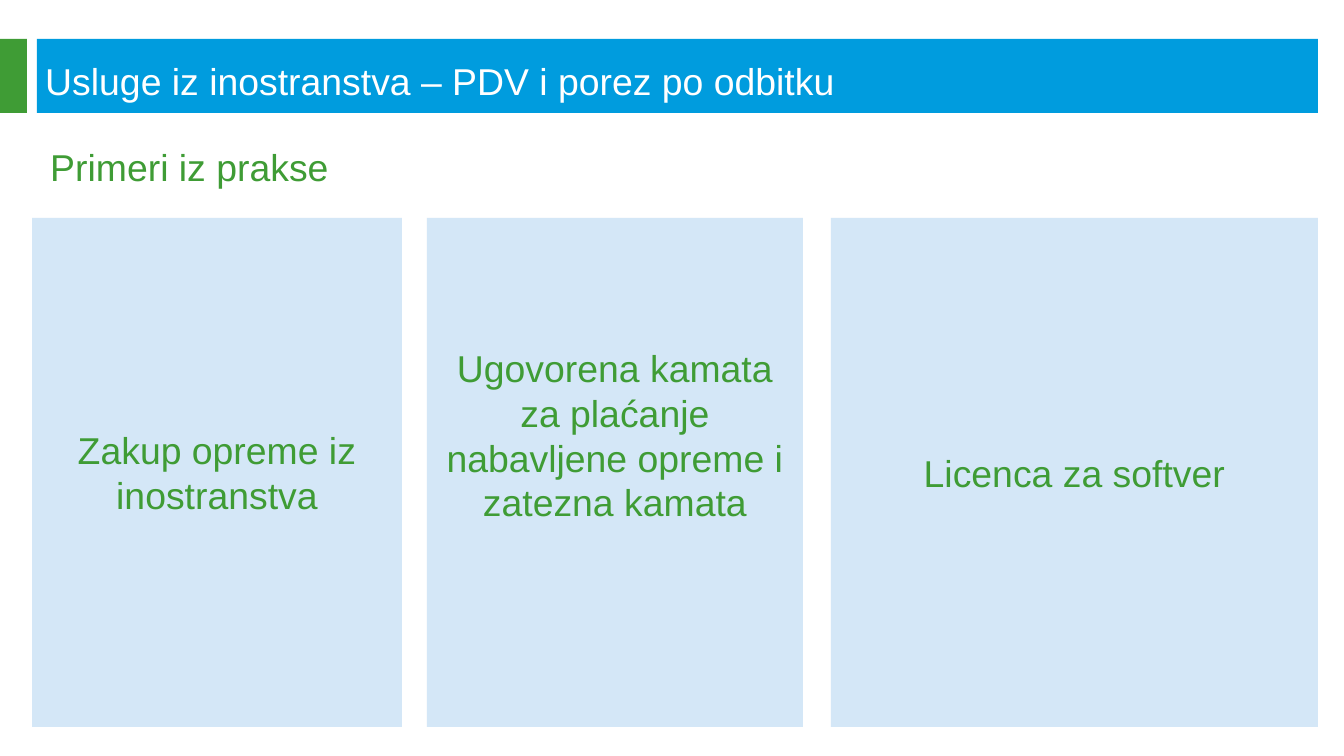
from pptx import Presentation
from pptx import util as u
from pptx.dml.color import RGBColor
from pptx.enum import shapes, text

COLORS = {"blue": "009CDE", "green": "3F9C35", "pale": "D4E7F7", "white": "FFFFFF"}
FONT, SIZE = "Arial", 20
PX = 914400 / 134.4
PAGE_SIZE = (1344, 756)
INSET = 7

# left, top, width, height in px
BARS = [("blue", (37, 39, 1281, 74)), ("green", (0, 39, 27, 74))]
HEADINGS = [
    ("Usluge iz inostranstva – PDV i porez po odbitku", "white",
     (32, 60, 1258, 41), text.MSO_ANCHOR.MIDDLE),
    ("Primeri iz prakse", "green", (37, 138, 1281, 71), text.MSO_ANCHOR.TOP),
]
# text, left, width, bottom inset in px
CARD_TOP, CARD_HEIGHT = 218, 509
CARDS = [
    ("Zakup opreme iz inostranstva", 32, 370, INSET),
    ("Ugovorena kamata za plaćanje nabavljene opreme i zatezna kamata", 427, 376, 82),
    ("Licenca za softver", 831, 487, INSET),
]


def px(value):
    return u.Emu(round(value * PX))


def color(name):
    return RGBColor.from_string(COLORS[name])


def add_block(page, fill, area):
    block = page.shapes.add_shape(shapes.MSO_SHAPE.RECTANGLE, *map(px, area))
    block.shadow.inherit = False
    block.fill.solid()
    block.fill.fore_color.rgb = color(fill)
    block.line.fill.background()
    return block


def write(box, words, ink, anchor, align, bottom=INSET):
    frame = box.text_frame
    frame.word_wrap = True
    frame.vertical_anchor = anchor
    frame.margin_bottom = px(bottom)
    para = frame.paragraphs[0]
    para.text = words
    para.alignment = align
    para.font.name = FONT
    para.font.size = u.Pt(SIZE)
    para.font.color.rgb = color(ink)


deck = Presentation()
deck.slide_width, deck.slide_height = map(px, PAGE_SIZE)
page = deck.slides.add_slide(deck.slide_layouts[6])

for fill, area in BARS:
    add_block(page, fill, area)

for words, ink, area, anchor in HEADINGS:
    box = page.shapes.add_textbox(*map(px, area))
    write(box, words, ink, anchor, text.PP_ALIGN.LEFT)

for words, left, width, bottom in CARDS:
    card = add_block(page, "pale", (left, CARD_TOP, width, CARD_HEIGHT))
    write(card, words, "green", text.MSO_ANCHOR.MIDDLE, text.PP_ALIGN.CENTER, bottom)

deck.save("out.pptx")
